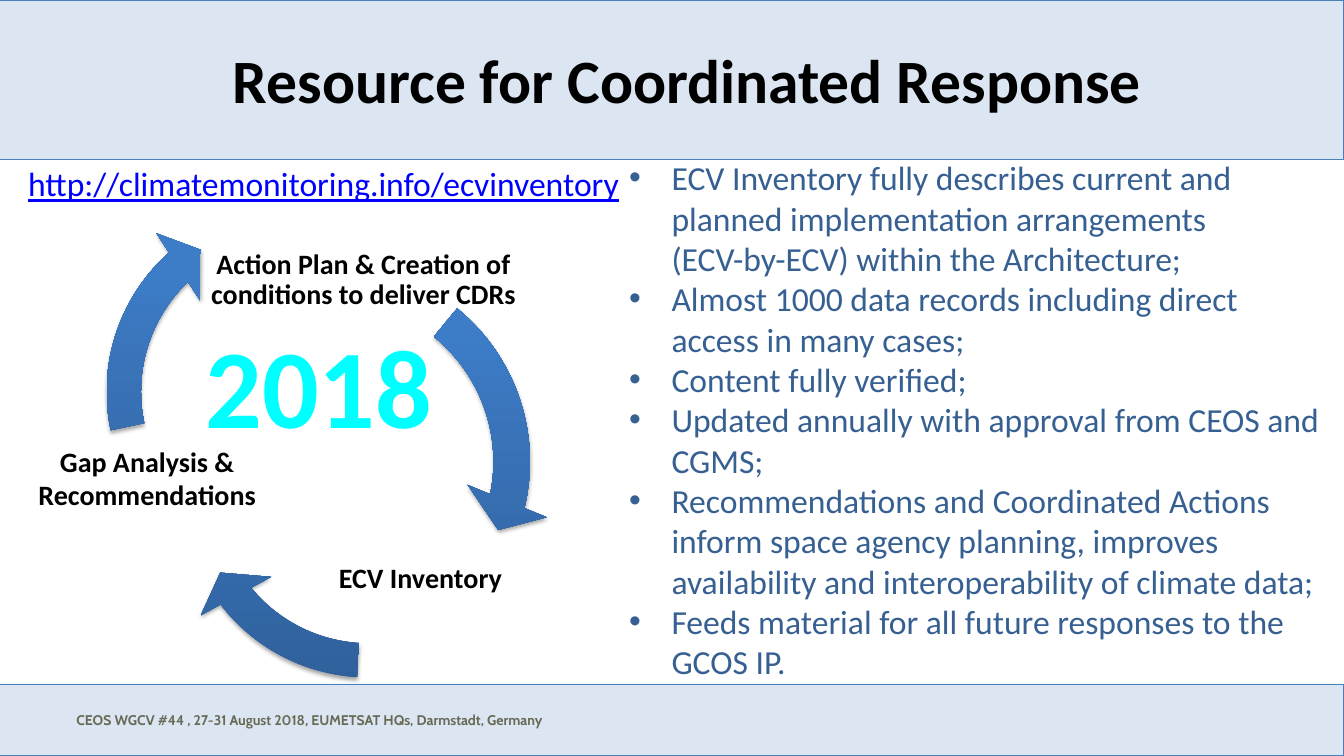
from dataclasses import dataclass

from lxml.etree import SubElement
from pptx import Presentation
from pptx.dml.color import RGBColor
from pptx.enum.shapes import MSO_SHAPE as Preset
from pptx.enum.text import MSO_ANCHOR as Anchor, MSO_AUTO_SIZE as AutoSize, PP_ALIGN as Align
from pptx.oxml.ns import qn
from pptx.util import Inches, Pt

BAND_FILL = RGBColor(0xDC, 0xE6, 0xF2)
BAND_LINE = RGBColor(0x4B, 0x7E, 0xBC)
BLACK = RGBColor(0, 0, 0)
LINK_BLUE = RGBColor(0, 0, 0xFF)
CYAN = RGBColor(0, 0xFF, 0xFF)
BODY_BLUE = RGBColor(0x37, 0x60, 0x92)
FOOTER_OLIVE = RGBColor(0x67, 0x6A, 0x55)
ARROW_DARK = RGBColor(0x2F, 0x5F, 0x99)
ARROW_LIGHT = RGBColor(0x3D, 0x7C, 0xC7)


@dataclass
class Box:
    left: float
    top: float
    width: float
    height: float

    def lengths(self) -> tuple:
        return tuple(Inches(v) for v in (self.left, self.top, self.width, self.height))


@dataclass
class CycleArrow:
    box: Box
    head_angle: float
    tail_angle: float


@dataclass
class CycleLabel:
    text: str
    box: Box
    line_spacing: float = 1.0


BANDS = [Box(0, 6.79, 13.33, 0.71), Box(0, 0, 13.33, 1.58)]

# Angles are in units of 100000/60000 degree, as the preset stores them
ARROWS = [
    CycleArrow(Box(1.06, 2.37, 4.44, 4.42), 7.557, 185.724),
    CycleArrow(Box(1.58, 2.8, 4.15, 4.15), 85.006, 56.051),
    CycleArrow(Box(0.83, 1.81, 4.15, 4.15), 136.444, 100.812),
]
# The first arrow runs top to right, the second along the bottom, the third up the left

LABELS = [
    CycleLabel("Action Plan & Creation of conditions to deliver CDRs",
               Box(1.98, 2.2, 3.25, 1.16), 0.9),
    CycleLabel("ECV Inventory", Box(2.95, 5.32, 2.44, 0.81)),
    CycleLabel("Gap Analysis & Recommendations", Box(0.21, 4.23, 2.5, 1.02)),
]

BULLETS = [
    "ECV Inventory fully describes current and planned implementation arrangements\n"
    "(ECV-by-ECV) within the Architecture;",
    "Almost 1000 data records including direct\naccess in many cases;",
    "Content fully verified;",
    "Updated annually with approval from CEOS and CGMS;",
    "Recommendations and Coordinated Actions inform space agency planning, "
    "improves availability and interoperability of climate data;",
    "Feeds material for all future responses to the GCOS IP.",
]


def place(shape, box: Box) -> None:
    shape.left, shape.top, shape.width, shape.height = box.lengths()


def write(shape, *texts: str, size: float, color: RGBColor, font: str = "Calibri",
          bold: bool = False, underline: bool = False, align=Align.LEFT,
          anchor=Anchor.TOP, margin: float | None = None,
          line_spacing: float = 1.0, hanging: float = 0) -> None:
    """Fill a shape with one paragraph per text."""
    frame = shape.text_frame
    frame.word_wrap = True
    frame.auto_size = AutoSize.NONE
    frame.vertical_anchor = anchor
    if margin is not None:
        frame.margin_left = frame.margin_right = Inches(margin)
        frame.margin_top = frame.margin_bottom = Inches(margin)
    for index, text in enumerate(texts):
        paragraph = frame.add_paragraph() if index else frame.paragraphs[0]
        paragraph.text = text
        paragraph.alignment = align
        paragraph.line_spacing = line_spacing
        paragraph.space_before = Pt(0)
        if hanging:
            properties = paragraph._p.get_or_add_pPr()
            properties.set("marL", str(Inches(hanging)))
            properties.set("indent", str(-Inches(hanging)))
        for run in paragraph.runs:
            run.font.name, run.font.size = font, Pt(size)
            run.font.bold, run.font.underline = bold, underline
            run.font.color.rgb = color


def add_text(slide, text: str, box: Box, **text_format) -> None:
    write(slide.shapes.add_textbox(*box.lengths()), text, **text_format)


def add_band(slide, box: Box) -> None:
    band = slide.shapes.add_shape(Preset.RECTANGLE, *box.lengths())
    band.shadow.inherit = False
    band.fill.solid()
    band.fill.fore_color.rgb = BAND_FILL
    band.line.color.rgb = BAND_LINE
    band.line.width = Pt(0.75)
    slide.shapes.title.element.addprevious(band.element)  # behind the title


def add_shadow(shape) -> None:
    shape.shadow.inherit = False
    effects = shape.element.spPr.find(qn("a:effectLst"))
    shadow = SubElement(effects, qn("a:outerShdw"), blurRad=str(Pt(3.1)), dist=str(Pt(1.8)),
                        dir="5400000", rotWithShape="0")
    color = SubElement(shadow, qn("a:srgbClr"), val="000000")
    SubElement(color, qn("a:alpha"), val="35000")


def add_arrow(slide, arrow: CycleArrow) -> None:
    shape = slide.shapes.add_shape(Preset.CIRCULAR_ARROW, *arrow.box.lengths())
    values = (0.082, 5.753, arrow.head_angle, arrow.tail_angle, 0.096)
    for index, value in enumerate(values):
        shape.adjustments[index] = value
    shape.fill.gradient()
    shape.fill.gradient_angle = 90
    stops = shape.fill.gradient_stops
    for stop, color, position in zip(stops, (ARROW_DARK, ARROW_LIGHT), (0, 0.8)):
        stop.color.rgb = color
        stop.position = position
    shape.line.fill.background()
    add_shadow(shape)


def main() -> None:
    presentation = Presentation()
    presentation.slide_width, presentation.slide_height = Inches(13.33), Inches(7.5)
    slide = presentation.slides.add_slide(presentation.slide_layouts[1])

    # Bands and footer
    for band in BANDS:
        add_band(slide, band)
    add_text(slide, "CEOS WGCV #44 , 27-31 August 2018, EUMETSAT HQs, Darmstadt, Germany",
             Box(0.66, 7.01, 8.65, 0.27), size=10, color=FOOTER_OLIVE, font="Cabin", bold=True)

    # Title and list
    title, body = slide.shapes.title, slide.placeholders[1]
    place(title, Box(2.11, 0.16, 9.42, 1.25))
    write(title, "Resource for Coordinated Response", size=44, color=BLACK, bold=True,
          align=Align.CENTER, anchor=Anchor.MIDDLE)
    place(body, Box(6.14, 1.55, 7.19, 5.22))
    write(body, *BULLETS, size=24, color=BODY_BLUE, anchor=Anchor.MIDDLE, hanging=0.42)

    # Web address
    add_text(slide, "http://climatemonitoring.info/ecvinventory", Box(0.21, 1.55, 6.13, 0.54),
             size=24, color=LINK_BLUE, underline=True, margin=0.07)

    # Cycle
    for label, arrow in zip(LABELS, ARROWS):
        add_text(slide, label.text, label.box, size=20, color=BLACK, bold=True, margin=0.03,
                 align=Align.CENTER, anchor=Anchor.MIDDLE, line_spacing=label.line_spacing)
        add_arrow(slide, arrow)
    add_text(slide, "2018", Box(1.94, 3.09, 2.47, 1.45), size=80, color=CYAN, bold=True)

    presentation.save("out.pptx")


if __name__ == "__main__":
    main()
